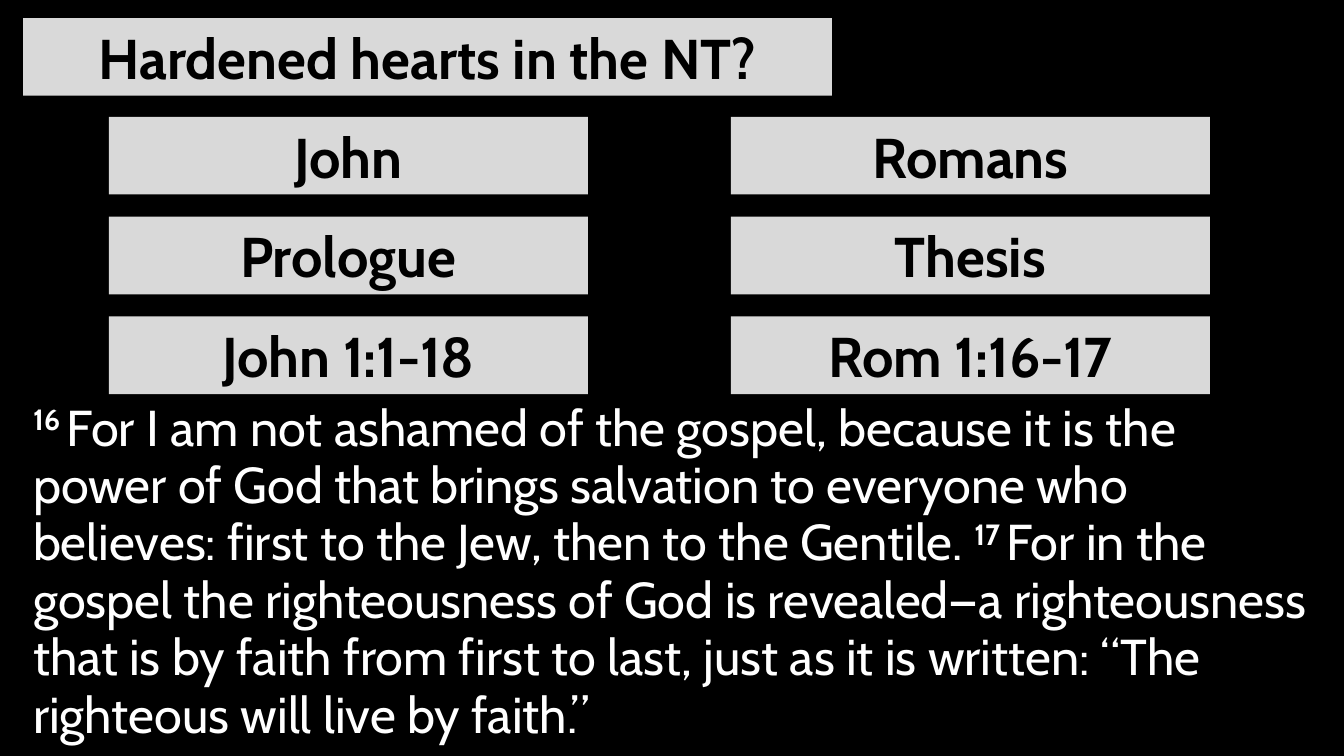
from pptx import Presentation
from pptx.dml.color import RGBColor
from pptx.enum.shapes import MSO_SHAPE
from pptx.enum.text import MSO_ANCHOR, MSO_AUTO_SIZE, PP_ALIGN
from pptx.util import Inches, Pt

RECTANGLE = MSO_SHAPE.RECTANGLE
MIDDLE, TOP = MSO_ANCHOR.MIDDLE, MSO_ANCHOR.TOP
CENTER, LEFT = PP_ALIGN.CENTER, PP_ALIGN.LEFT
GROW = MSO_AUTO_SIZE.SHAPE_TO_FIT_TEXT

SLIDE_WIDTH, SLIDE_HEIGHT = 13.33, 7.5
FONT = "Cabin"
BLACK, WHITE, GRAY = "000000", "FFFFFF", "D9D9D9"
LABEL_HEIGHT = 0.77
MARGIN = 0.23

# Each row pairs John with Romans
COMPARISON = [
    ("John", "Romans"),
    ("Prologue", "Thesis"),
    ("John 1:1-18", "Rom 1:16-17"),
]
VERSES = [
    ("16", "For I am not ashamed of the gospel, because it is the power of God "
           "that brings salvation to everyone who believes: first to the Jew, "
           "then to the Gentile. "),
    ("17", "For in the gospel the righteousness of God is revealed—a "
           "righteousness that is by faith from first to last, just as it is "
           "written: “The righteous will live by faith.”"),
]


def color(value):
    return RGBColor.from_string(value)


def add_run(paragraph, text, size=40, fill=BLACK, bold=False, superscript=False):
    run = paragraph.add_run()
    run.text = text
    font = run.font
    font.name, font.size, font.bold = FONT, Pt(size), bold
    font.color.rgb = color(fill)
    if superscript:
        font._element.set("baseline", "30000")


def prepare_text(shape, alignment, anchor):
    frame = shape.text_frame
    frame.word_wrap = True
    frame.auto_size = GROW
    frame.vertical_anchor = anchor
    paragraph = frame.paragraphs[0]
    paragraph.alignment = alignment
    return paragraph


def add_label(slide, text, left, top, width):
    shape = slide.shapes.add_shape(
        RECTANGLE, Inches(left), Inches(top), Inches(width), Inches(LABEL_HEIGHT))
    shape.shadow.inherit = False
    shape.fill.solid()
    shape.fill.fore_color.rgb = color(GRAY)
    shape.line.fill.background()
    add_run(prepare_text(shape, CENTER, MIDDLE), text, bold=True)


def add_comparison(slide, left, top, width, height):
    label_width = 4.75
    column_step = width - label_width
    row_step = (height - LABEL_HEIGHT) / (len(COMPARISON) - 1)
    for row, labels in enumerate(COMPARISON):
        for column, text in enumerate(labels):
            add_label(slide, text, left + column * column_step,
                      top + row * row_step, label_width)


def add_passage(slide, left, top, width, height):
    box = slide.shapes.add_textbox(
        Inches(left), Inches(top), Inches(width), Inches(height))
    paragraph = prepare_text(box, LEFT, TOP)
    paragraph.line_spacing = 0.95
    for number, verse in VERSES:
        add_run(paragraph, number + " ", size=36, fill=WHITE, bold=True,
                superscript=True)
        add_run(paragraph, verse, size=36, fill=WHITE)


def main():
    presentation = Presentation()
    presentation.slide_width = Inches(SLIDE_WIDTH)
    presentation.slide_height = Inches(SLIDE_HEIGHT)
    slide = presentation.slides.add_slide(presentation.slide_layouts[6])
    slide.background.fill.solid()
    slide.background.fill.fore_color.rgb = color(BLACK)

    # Title, comparison grid, passage
    add_label(slide, "Hardened hearts in the NT?", MARGIN, 0.18, 8.02)
    add_comparison(slide, 1.08, 1.16, 10.92, 2.75)
    add_passage(slide, MARGIN, 3.92, SLIDE_WIDTH - 2 * MARGIN, 3.55)
    presentation.save("out.pptx")


if __name__ == "__main__":
    main()
